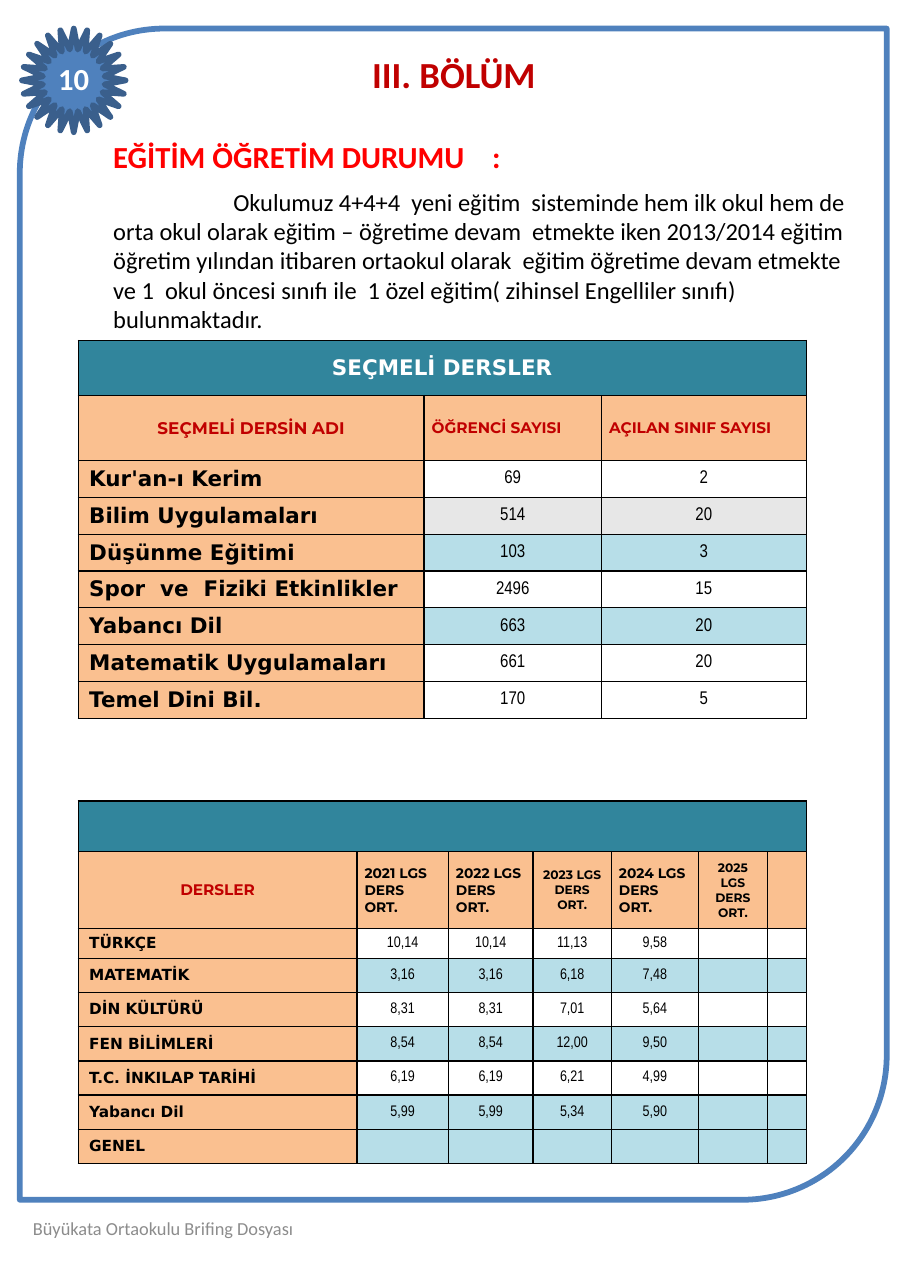
from lxml.etree import SubElement
from pptx import Presentation
from pptx.dml.color import RGBColor
from pptx.enum.shapes import MSO_SHAPE
from pptx.enum.text import MSO_ANCHOR, MSO_AUTO_SIZE, PP_ALIGN
from pptx.oxml import parse_xml
from pptx.oxml.ns import nsdecls, qn
from pptx.util import Inches, Pt

# Content
TITLE = "III. BÖLÜM"
PAGE = "10"
FOOTER = "Büyükata Ortaokulu Brifing Dosyası"
HEADING = "EĞİTİM ÖĞRETİM DURUMU\t:"
BODY = (
    "Okulumuz 4+4+4  yeni eğitim  sisteminde hem ilk okul hem de orta okul "
    "olarak eğitim – öğretime devam  etmekte iken 2013/2014 eğitim öğretim "
    "yılından itibaren ortaokul olarak  eğitim öğretime devam etmekte ve 1  "
    "okul öncesi sınıfı ile  1 özel eğitim( zihinsel Engelliler sınıfı) "
    "bulunmaktadır."
)

WHITE, BLACK, RED = "FFFFFF", "000000", "C00000"
BLUE, TEAL, PEACH, SKY, GREY = "4F81BD", "31859C", "FAC090", "B7DEE8", "E7E7E7"
LEFT, MID = PP_ALIGN.LEFT, PP_ALIGN.CENTER

# Header cells: text, size, colour, alignment
# Body rows: fill of the value cells, then label and values
COURSES = dict(
    top=3.09, title="SEÇMELİ DERSLER", cols=[3.14, 1.61, 1.86],
    rows=[0.5, 0.59] + [2.34 / 7] * 7, label=14, value=12,
    head=[("SEÇMELİ DERSİN ADI", 11, RED, MID),
          ("ÖĞRENCİ SAYISI", 10, RED, LEFT),
          ("AÇILAN SINIF SAYISI", 10, RED, LEFT)],
    body=[(WHITE, "Kur'an-ı Kerim", "69", "2"),
          (GREY, "Bilim Uygulamaları", "514", "20"),
          (SKY, "Düşünme Eğitimi", "103", "3"),
          (WHITE, "Spor  ve  Fiziki Etkinlikler", "2496", "15"),
          (SKY, "Yabancı Dil", "663", "20"),
          (WHITE, "Matematik Uygulamaları", "661", "20"),
          (WHITE, "Temel Dini Bil.", "170", "5")],
)
SCORES = dict(
    top=7.27, title="", cols=[2.53, 0.83, 0.77, 0.71, 0.79, 0.63, 0.35],
    rows=[0.46, 0.7, 0.27] + [0.31] * 6, label=10, value=10,
    head=[("DERSLER", 10, RED, MID),
          ("2021 LGS DERS ORT.", 9, BLACK, LEFT),
          ("2022 LGS DERS ORT.", 9, BLACK, LEFT),
          ("2023 LGS DERS ORT.", 8, BLACK, MID),
          ("2024 LGS DERS ORT.", 9, BLACK, LEFT),
          ("2025 LGS DERS ORT.", 8, BLACK, MID),
          ("", 8, BLACK, MID)],
    body=[(WHITE, "TÜRKÇE", "10,14", "10,14", "11,13", "9,58"),
          (SKY, "MATEMATİK", "3,16", "3,16", "6,18", "7,48"),
          (WHITE, "DİN KÜLTÜRÜ", "8,31", "8,31", "7,01", "5,64"),
          (SKY, "FEN BİLİMLERİ", "8,54", "8,54", "12,00", "9,50"),
          (WHITE, "T.C. İNKILAP TARİHİ", "6,19", "6,19", "6,21", "4,99"),
          (SKY, "Yabancı Dil", "5,99", "5,99", "5,34", "5,90"),
          (SKY, "GENEL")],
)

deck = Presentation()
deck.slide_width, deck.slide_height = Inches(8.27), Inches(11.69)
slide = deck.slides.add_slide(deck.slide_layouts[5])
shapes = slide.shapes


def color(code):
    return RGBColor.from_string(code)


def write(para, text, size=12, font="Calibri", ink=BLACK, bold=False, align=LEFT):
    para.alignment = align
    if not text:  # an empty cell still needs a small line height
        SubElement(para._p, qn("a:endParaRPr"), sz=str(size * 100))
        return
    run = para.add_run()
    run.text = text
    run.font.size, run.font.name, run.font.bold = Pt(size), font, bold
    run.font.color.rgb = color(ink)


def place(shape, box):
    shape.left, shape.top, shape.width, shape.height = map(Inches, box)


def add_box(box, wrap=True):
    frame = shapes.add_textbox(*map(Inches, box)).text_frame
    frame.word_wrap = wrap
    return frame


def add_form(kind, box, fill, line):
    form = shapes.add_shape(kind, *map(Inches, box))
    form.shadow.inherit = False
    form.fill.solid()
    form.fill.fore_color.rgb = color(fill)
    form.line.color.rgb = color(line)
    form.line.width = Pt(3.78)
    return form


def style_cell(cell, fill, tight=False):
    cell.vertical_anchor = MSO_ANCHOR.MIDDLE
    if tight:
        cell.margin_left = cell.margin_right = Inches(0.07)
        cell.margin_top = cell.margin_bottom = 0
    cell.fill.solid()
    cell.fill.fore_color.rgb = color(fill)
    for spot, side in enumerate("LRTB"):
        cell._tc.tcPr.insert(spot, parse_xml(
            f'<a:ln{side} {nsdecls("a")} w="12700"><a:solidFill>'
            f'<a:srgbClr val="{BLACK}"/></a:solidFill></a:ln{side}>'))


def add_grid(data):
    cols, rows = data["cols"], data["rows"]
    grid = shapes.add_table(
        len(rows), len(cols), Inches(0.71), Inches(data["top"]),
        Inches(sum(cols)), Inches(sum(rows))).table
    for col, width in zip(grid.columns, cols):
        col.width = Inches(width)
    for row, height in zip(grid.rows, rows):
        row.height = Inches(height)

    # Title band
    grid.cell(0, 0).merge(grid.cell(0, len(cols) - 1))
    for c in range(len(cols)):
        style_cell(grid.cell(0, c), TEAL)
    write(grid.cell(0, 0).text_frame.paragraphs[0], data["title"], size=14,
          font="DejaVu Sans", ink=WHITE, bold=True, align=MID)

    # Column heads
    for c, (text, size, ink, align) in enumerate(data["head"]):
        cell = grid.cell(1, c)
        style_cell(cell, PEACH, tight=c > 0)
        write(cell.text_frame.paragraphs[0], text, size=size,
              font="Montserrat", ink=ink, bold=True, align=align)

    # Labels and values
    for r, (fill, *texts) in enumerate(data["body"], 2):
        texts += [""] * (len(cols) - len(texts))
        for c, text in enumerate(texts):
            cell = grid.cell(r, c)
            para = cell.text_frame.paragraphs[0]
            if c == 0:
                style_cell(cell, PEACH)
                write(para, text, size=data["label"], font="DejaVu Sans", bold=True)
            else:
                style_cell(cell, fill, tight=r == 2)
                write(para, text, size=data["value"], font="Arial Narrow", align=MID)


# Page frame, kept behind the title, and number badge
border = add_form(MSO_SHAPE.ROUND_2_DIAG_RECTANGLE, (0.18, 0.26, 7.87, 10.63), WHITE, BLUE)
shapes._spTree.insert(2, border._element)
badge = add_form(MSO_SHAPE.STAR_24_POINT, (0.2, 0.26, 0.94, 0.94), BLUE, "3A5F8C")
badge.adjustments[0] = 0.3

# Title
title = shapes.title
place(title, (3.27, 0.42, 1.7, 0.5))
title.text_frame.word_wrap = False
title.text_frame.auto_size = MSO_AUTO_SIZE.NONE
title.text_frame.vertical_anchor = MSO_ANCHOR.TOP
write(title.text_frame.paragraphs[0], TITLE, size=24, ink=RED, bold=True, align=MID)

# Page number and footer
write(add_box((0.43, 0.49, 0.55, 0.44)).paragraphs[0], PAGE, size=20, ink=WHITE, bold=True)
foot = add_box((0.2, 10.84, 5.25, 0.62))
foot.vertical_anchor = MSO_ANCHOR.MIDDLE
write(foot.paragraphs[0], FOOTER, size=12, ink="8C8C8C")

# Heading with a tab stop for the colon, then the indented paragraph
intro = add_box((0.93, 1.2, 6.9, 1.92))
head, body = intro.paragraphs[0], intro.add_paragraph()
stops = SubElement(head._p.get_or_add_pPr(), qn("a:tabLst"))
SubElement(stops, qn("a:tab"), pos=str(Inches(3.44)), algn="l")
write(head, HEADING, size=20, ink="FF0000", bold=True)
body._p.get_or_add_pPr().set("indent", str(Inches(1.09)))
body.space_before = Pt(8)
write(body, BODY, size=16)

# Tables
for data in (COURSES, SCORES):
    add_grid(data)

deck.save("out.pptx")
